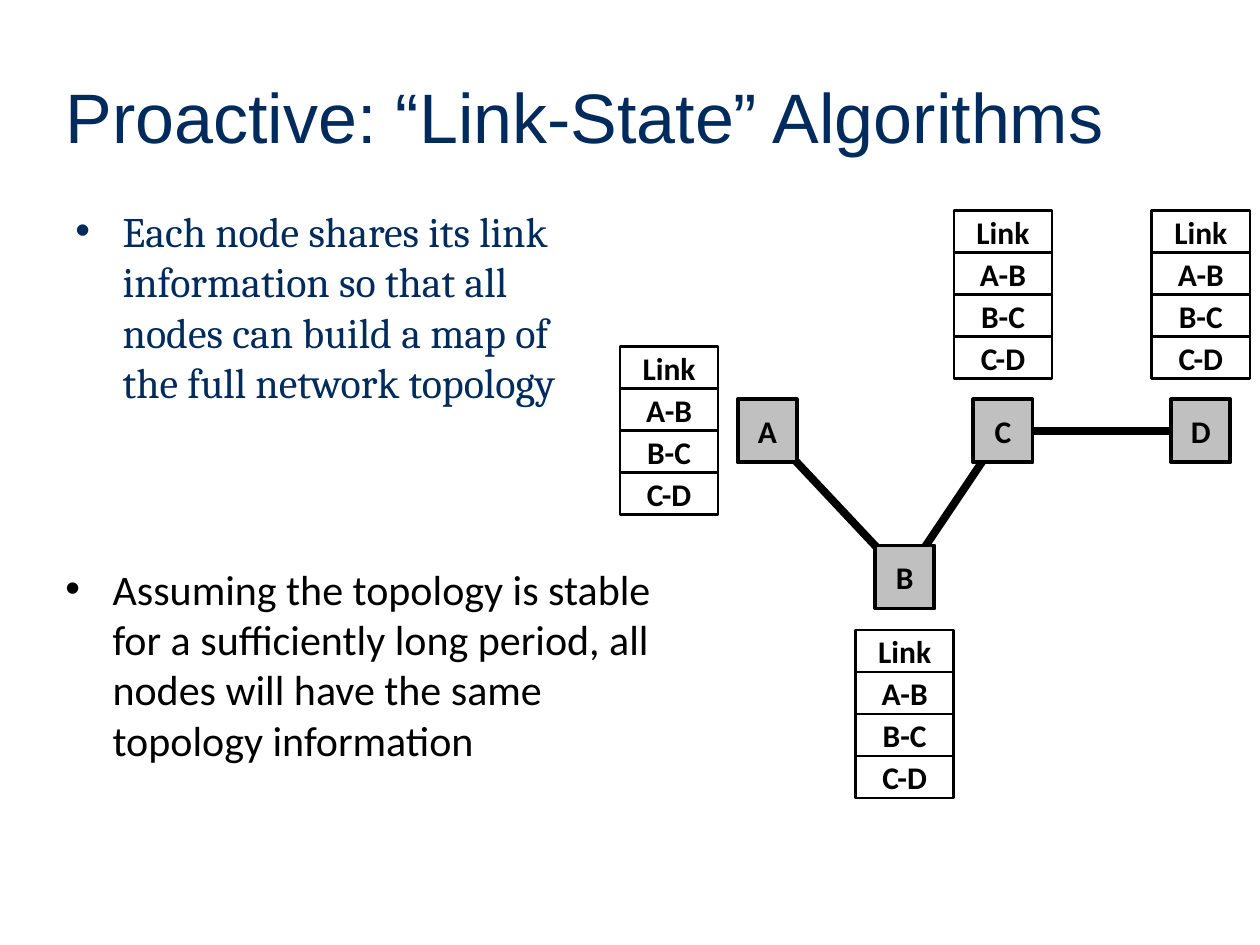
import dataclasses

import lxml.etree
import pptx
import pptx.dml.color
import pptx.enum.shapes
import pptx.enum.text
import pptx.oxml.ns
import pptx.util

Inches = pptx.util.Inches
Pt = pptx.util.Pt
qn = pptx.oxml.ns.qn
MIDDLE = pptx.enum.text.MSO_ANCHOR.MIDDLE


@dataclasses.dataclass(frozen=True)
class Theme:
    navy: str = "002B5C"
    black: str = "000000"
    white: str = "FFFFFF"
    gray: str = "C0C0C0"
    title_font: str = "Arial"
    serif_font: str = "Cambria"
    sans_font: str = "Calibri"
    title_size: int = 40
    body_size: int = 24
    label_size: int = 18
    link_width: float = 4.5
    node_border: float = 2.25
    cell_border: float = 1.5


def rgb(color):
    return pptx.dml.color.RGBColor.from_string(color)


def set_font(paragraph, name, size, color, bold=False):
    font = paragraph.font
    font.name, font.size, font.bold = name, Pt(size), bold
    font.color.rgb = rgb(color)


class SlideBuilder:
    def __init__(self, slide, theme):
        self.slide = slide
        self.theme = theme

    def title(self, text, left, top, width, height):
        shape = self.slide.shapes.title
        shape.left, shape.top = Inches(left), Inches(top)
        shape.width, shape.height = Inches(width), Inches(height)
        shape.text_frame.text = text
        shape.text_frame.vertical_anchor = MIDDLE
        paragraph = shape.text_frame.paragraphs[0]
        paragraph.alignment = pptx.enum.text.PP_ALIGN.LEFT
        set_font(paragraph, self.theme.title_font, self.theme.title_size, self.theme.navy)

    def bullet(self, text, left, top, width, height, font, color):
        shape = self.slide.shapes.add_textbox(
            Inches(left), Inches(top), Inches(width), Inches(height))
        shape.text_frame.word_wrap = True
        paragraph = shape.text_frame.paragraphs[0]
        paragraph.text = text
        properties = paragraph._p.get_or_add_pPr()
        indent = Pt(27)
        properties.set("marL", str(indent))
        properties.set("indent", str(-indent))
        lxml.etree.SubElement(properties, qn("a:buFont"), typeface="Arial")
        lxml.etree.SubElement(properties, qn("a:buChar"), char="•")
        set_font(paragraph, font, self.theme.body_size, color)

    def link(self, start, end):
        connector = self.slide.shapes.add_connector(
            pptx.enum.shapes.MSO_CONNECTOR.STRAIGHT,
            *(Inches(value) for value in (*start, *end)))
        connector.line.color.rgb = rgb(self.theme.black)
        connector.line.width = Pt(self.theme.link_width)
        lxml.etree.SubElement(connector._element.spPr, qn("a:effectLst"))

    def box(self, text, center, width, height, fill, border):
        x, y = center
        shape = self.slide.shapes.add_shape(
            pptx.enum.shapes.MSO_SHAPE.RECTANGLE, Inches(x - width / 2),
            Inches(y - height / 2), Inches(width), Inches(height))
        shape.shadow.inherit = False
        shape.fill.solid()
        shape.fill.fore_color.rgb = rgb(fill)
        shape.line.color.rgb = rgb(self.theme.black)
        shape.line.width = Pt(border)
        text_frame = shape.text_frame
        text_frame.text = text
        text_frame.word_wrap = False
        text_frame.vertical_anchor = MIDDLE
        paragraph = text_frame.paragraphs[0]
        paragraph.alignment = pptx.enum.text.PP_ALIGN.CENTER
        set_font(paragraph, self.theme.sans_font, self.theme.label_size,
                 self.theme.black, bold=True)

    def node(self, name, center):
        self.box(name, center, 0.47, 0.5, self.theme.gray, self.theme.node_border)

    def link_list(self, labels, center_x, top):
        """Stack one bordered cell per label, downwards from top."""
        height = 1 / 3
        for index, label in enumerate(labels):
            self.box(label, (center_x, top + (index + 0.5) * height), 0.78, height,
                     self.theme.white, self.theme.cell_border)


def main():
    presentation = pptx.Presentation()
    presentation.slide_width, presentation.slide_height = Inches(10), Inches(7.5)
    theme = Theme()
    builder = SlideBuilder(
        presentation.slides.add_slide(presentation.slide_layouts[5]), theme)

    builder.title("Proactive: “Link-State” Algorithms", 0.42, 0.42, 9.08, 1)
    builder.bullet(
        "Each node shares its link information so that all nodes can build "
        "a map of the full network topology",
        0.5, 1.58, 4.42, 5.12, theme.serif_font, theme.navy)

    node_centers = {"A": (6.09, 3.42), "B": (7.18, 4.58),
                    "C": (7.96, 3.42), "D": (9.53, 3.42)}
    links = ["A-B", "B-C", "C-D"]
    for link in links:
        start, end = link.split("-")
        builder.link(node_centers[start], node_centers[end])
    for name, center in node_centers.items():
        builder.node(name, center)

    for center_x, top in [(5.31, 2.75), (7.96, 1.67), (9.53, 1.67), (7.18, 5)]:
        builder.link_list(["Link", *links], center_x, top)

    builder.bullet(
        "Assuming the topology is stable for a sufficiently long period, "
        "all nodes will have the same topology information",
        0.42, 4.42, 5, 2.58, theme.sans_font, theme.black)
    presentation.save("out.pptx")


if __name__ == "__main__":
    main()
